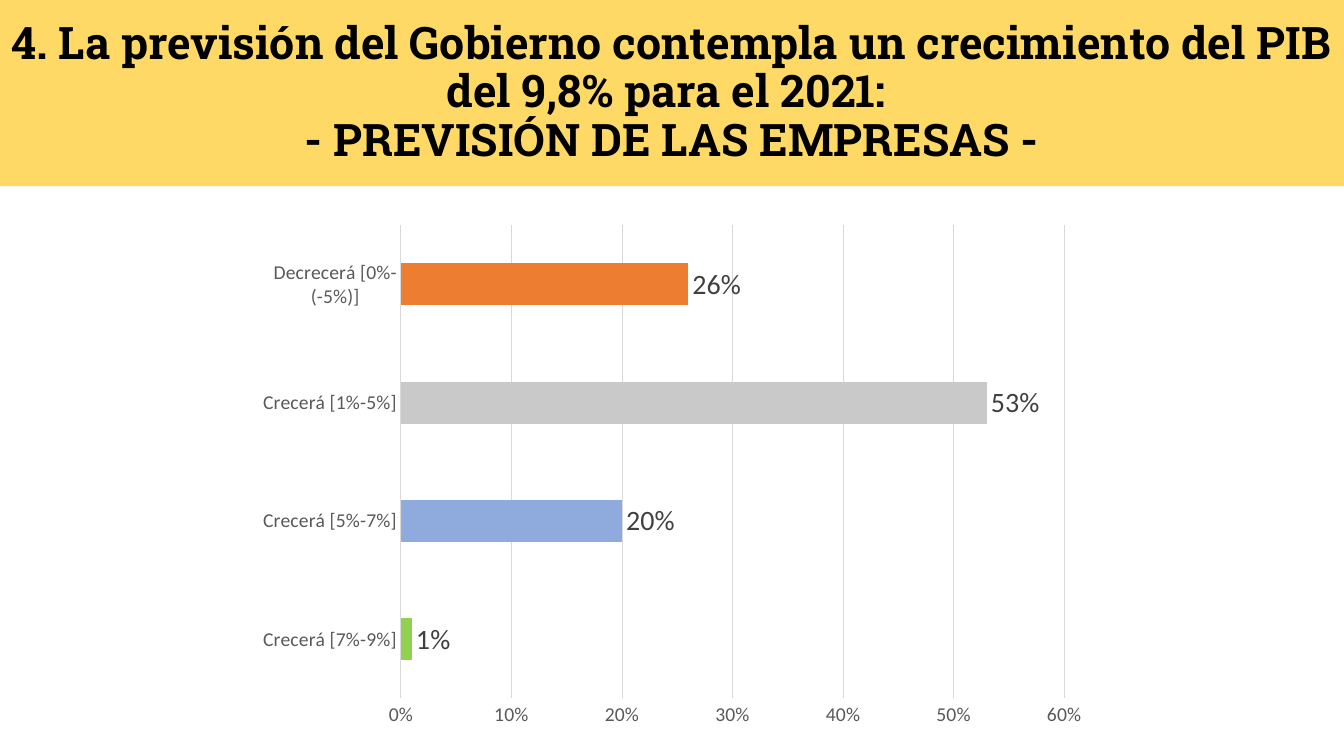
"""Build a slide with the companies' GDP growth forecast for 2021."""
from dataclasses import dataclass

from pptx import Presentation
from pptx import util as u
from pptx.chart.data import CategoryChartData
from pptx.dml.color import RGBColor
from pptx.enum import chart as charts, shapes, text

SLIDE_WIDTH = 960
SLIDE_HEIGHT = 540
BODY_FONT = "Calibri"
TITLE_FONT = "Roboto Slab"
GRID_COLOUR = "D9D9D9"
AXIS_COLOUR = "595959"


@dataclass
class Forecast:
    """One answer with its share and bar colour."""
    label: str
    share: float
    colour: str


FORECASTS = [
    Forecast("Crecerá [7%-9%]", 0.01, "92D050"),
    Forecast("Crecerá [5%-7%]", 0.20, "8FAADC"),
    Forecast("Crecerá [1%-5%]", 0.53, "C9C9C9"),
    Forecast("Decrecerá [0%-(-5%)]", 0.26, "ED7D31"),
]
TITLE_LINES = [
    "4. La previsión del Gobierno contempla un crecimiento del PIB del 9,8% para el 2021: ",
    "- PREVISIÓN DE LAS EMPRESAS -",
]


def set_fill(fill, colour: str) -> None:
    """Make a fill solid in a hex colour."""
    fill.solid()
    fill.fore_color.rgb = RGBColor.from_string(colour)


def set_font(font, size: float, colour: str, name: str = BODY_FONT, bold: bool = False) -> None:
    """Apply typeface, size, weight and colour."""
    font.name = name
    font.size = u.Pt(size)
    font.bold = bold
    set_fill(font.fill, colour)


def set_line(line, colour: str, width: float = 0.75) -> None:
    """Apply a solid line."""
    set_fill(line.fill, colour)
    line.width = u.Pt(width)


def write_text(shape, lines: list[str], *, size: float, colour: str, name: str,
               bold: bool = False, spacing: float = 1.0) -> None:
    """Write centred paragraphs into a shape."""
    frame = shape.text_frame
    frame.word_wrap = True
    frame.vertical_anchor = text.MSO_ANCHOR.MIDDLE
    frame.text = "\n".join(lines)
    for paragraph in frame.paragraphs:
        paragraph.alignment = text.PP_ALIGN.CENTER
        paragraph.line_spacing = spacing
        for run in paragraph.runs:
            set_font(run.font, size, colour, name, bold)


def add_title(slide) -> None:
    """Add the title band across the top."""
    band = slide.shapes.add_shape(
        shapes.MSO_SHAPE.RECTANGLE, 0, 0, u.Pt(SLIDE_WIDTH), u.Pt(133))
    band.shadow.inherit = False
    set_fill(band.fill, "FFD966")
    band.line.fill.background()
    write_text(band, TITLE_LINES, size=32, colour="000000", name=TITLE_FONT,
               bold=True, spacing=0.9)


def format_axes(chart) -> None:
    """Style both axes and the grid."""
    for axis in (chart.category_axis, chart.value_axis):
        axis.major_tick_mark = charts.XL_TICK_MARK.NONE
        axis.minor_tick_mark = charts.XL_TICK_MARK.NONE
        set_font(axis.tick_labels.font, 14, AXIS_COLOUR)
    set_line(chart.category_axis.format.line, GRID_COLOUR)
    values = chart.value_axis
    values.minimum_scale, values.maximum_scale, values.major_unit = 0, 0.6, 0.1
    values.format.line.fill.background()
    set_line(values.major_gridlines.format.line, GRID_COLOUR)
    values.tick_labels.number_format = "0%"
    values.tick_labels.number_format_is_linked = False


def add_forecast_chart(slide) -> None:
    """Add the bar chart of forecasts."""
    data = CategoryChartData(number_format="0%")
    data.categories = [forecast.label for forecast in FORECASTS]
    data.add_series("Series 1", [forecast.share for forecast in FORECASTS])
    chart = slide.shapes.add_chart(
        charts.XL_CHART_TYPE.BAR_CLUSTERED,
        u.Pt(175.7), u.Pt(153.4), u.Pt(609), u.Pt(373), data).chart
    chart.has_legend = False
    chart.has_title = False
    set_font(chart.font, 10, "000000")
    format_axes(chart)

    plot = chart.plots[0]
    plot.gap_width = 182
    plot.vary_by_categories = False
    series = plot.series[0]
    set_fill(series.format.fill, "5B9BD5")
    for index, forecast in enumerate(FORECASTS):
        set_fill(series.points[index].format.fill, forecast.colour)

    labels = series.data_labels
    labels.show_value = True
    labels.position = charts.XL_LABEL_POSITION.OUTSIDE_END
    labels.number_format = "0%"
    labels.number_format_is_linked = False
    set_font(labels.font, 20, "404040")


def main() -> None:
    """Create and save the presentation."""
    presentation = Presentation()
    presentation.slide_width = u.Pt(SLIDE_WIDTH)
    presentation.slide_height = u.Pt(SLIDE_HEIGHT)
    slide = presentation.slides.add_slide(presentation.slide_layouts[6])
    add_title(slide)
    add_forecast_chart(slide)
    presentation.save("out.pptx")


if __name__ == "__main__":
    main()
